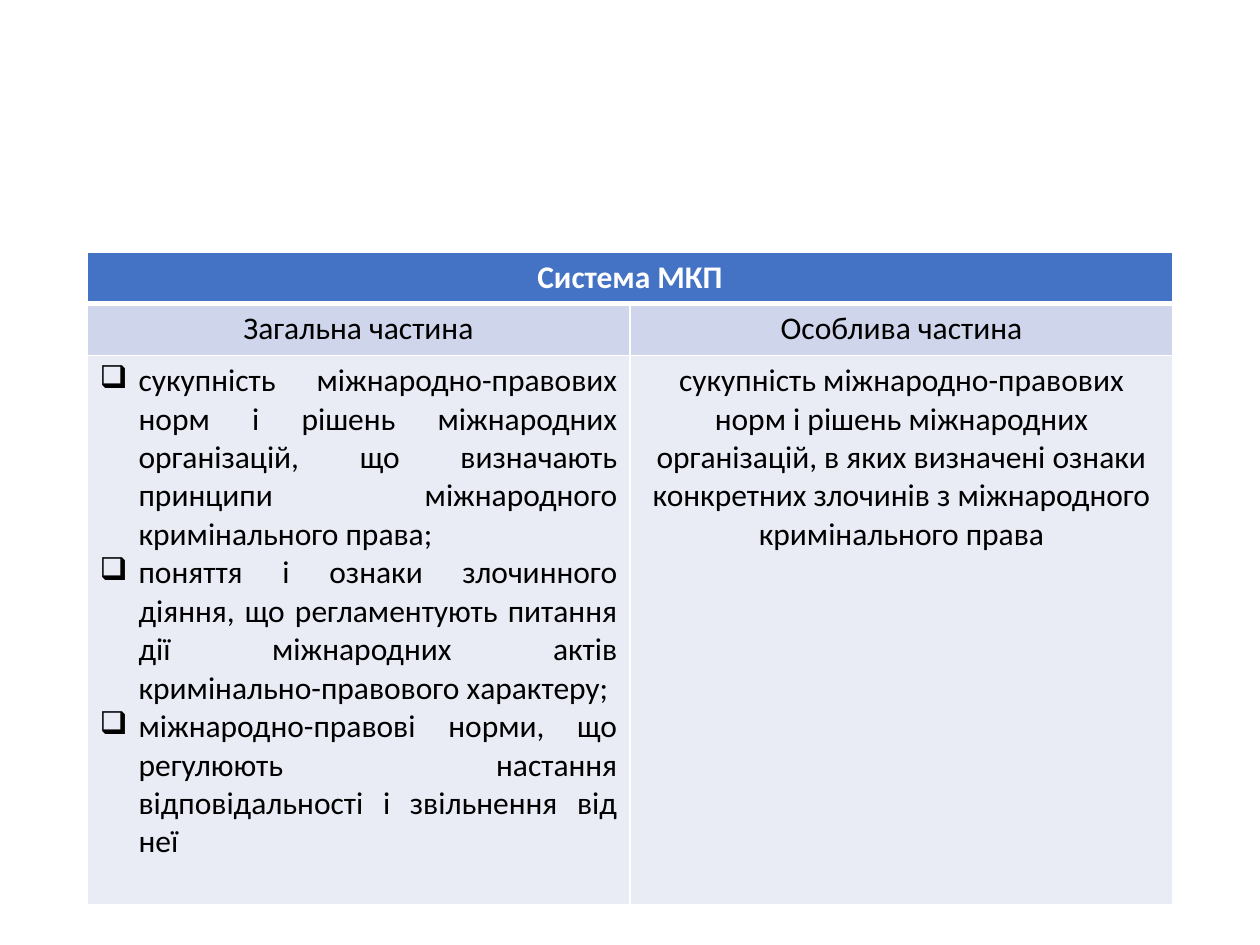
"""Build a slide with a table on the system of international criminal law."""
import lxml.etree
import pptx
import pptx.dml.color
import pptx.enum.text
import pptx.oxml.ns
import pptx.util

Inches = pptx.util.Inches
RGBColor = pptx.dml.color.RGBColor
ALIGN = pptx.enum.text.PP_ALIGN

WHITE = RGBColor(0xFF, 0xFF, 0xFF)
BLACK = RGBColor(0x00, 0x00, 0x00)
HEADER_BLUE = RGBColor(0x44, 0x72, 0xC4)
BAND_DARK = RGBColor(0xCF, 0xD5, 0xEA)
BAND_LIGHT = RGBColor(0xE9, 0xEB, 0xF5)

TITLE = "Система МКП"
PARTS = ["Загальна частина", "Особлива частина"]
GENERAL = [
    "сукупність міжнародно-правових норм і рішень міжнародних організацій, "
    "що визначають принципи міжнародного кримінального права;",
    "поняття і ознаки злочинного діяння, що регламентують питання дії "
    "міжнародних актів кримінально-правового характеру;",
    "міжнародно-правові норми, що регулюють настання відповідальності "
    "і звільнення від неї",
]
SPECIAL = [
    "сукупність міжнародно-правових норм і рішень міжнародних організацій, "
    "в яких визначені ознаки конкретних злочинів з міжнародного кримінального права",
]
ROWS = [
    {"texts": [[TITLE], []], "fill": HEADER_BLUE, "height": 0.41, "top": 1, "bottom": 3},
    {"texts": [[part] for part in PARTS], "fill": BAND_DARK, "height": 0.41, "top": 3, "bottom": 1},
    {"texts": [GENERAL, SPECIAL], "fill": BAND_LIGHT, "height": 4.36, "top": 1, "bottom": 1},
]
LEFT, TOP, COLUMN_WIDTH = 0.69, 2, 4.31
BULLET_INDENT = 0.31


def add_child(parent, tag, **attributes):
    return lxml.etree.SubElement(parent, pptx.oxml.ns.qn(tag), **attributes)


def set_borders(cell, top, bottom):
    properties = cell._tc.get_or_add_tcPr()
    for side, width in (("L", 1), ("R", 1), ("T", top), ("B", bottom)):
        line = add_child(properties, f"a:ln{side}", w=str(pptx.util.Pt(width)))
        add_child(add_child(line, "a:solidFill"), "a:srgbClr", val=str(WHITE))


def write_text(frame, texts, color=BLACK, bold=False, bullet=None):
    for index, text in enumerate(texts):
        paragraph = frame.add_paragraph() if index else frame.paragraphs[0]
        paragraph.alignment = ALIGN.JUSTIFY if bullet else ALIGN.CENTER
        if bullet:
            properties = paragraph._p.get_or_add_pPr()
            properties.set("marL", str(Inches(BULLET_INDENT)))
            properties.set("indent", str(-Inches(BULLET_INDENT)))
            add_child(properties, "a:buChar", char=bullet)
        run = paragraph.add_run()
        run.text = text
        run.font.name = "Calibri"
        run.font.size = pptx.util.Pt(18)
        run.font.bold = bold
        run.font.color.rgb = color


def main():
    presentation = pptx.Presentation()
    presentation.slide_width, presentation.slide_height = Inches(10), Inches(7.5)
    slide = presentation.slides.add_slide(presentation.slide_layouts[6])
    height = sum(row["height"] for row in ROWS)
    table = slide.shapes.add_table(
        len(ROWS), len(PARTS), Inches(LEFT), Inches(TOP),
        Inches(COLUMN_WIDTH * len(PARTS)), Inches(height)).table
    for column in table.columns:
        column.width = Inches(COLUMN_WIDTH)
    table.cell(0, 0).merge(table.cell(0, 1))
    for row_index, row in enumerate(ROWS):
        table.rows[row_index].height = Inches(row["height"])
        is_header = row_index == 0
        for column_index, texts in enumerate(row["texts"]):
            cell = table.cell(row_index, column_index)
            set_borders(cell, row["top"], row["bottom"])
            cell.fill.solid()
            cell.fill.fore_color.rgb = row["fill"]
            write_text(cell.text_frame, texts, bold=is_header,
                       color=WHITE if is_header else BLACK,
                       bullet="❑" if texts is GENERAL else None)
    presentation.save("out.pptx")


if __name__ == "__main__":
    main()
